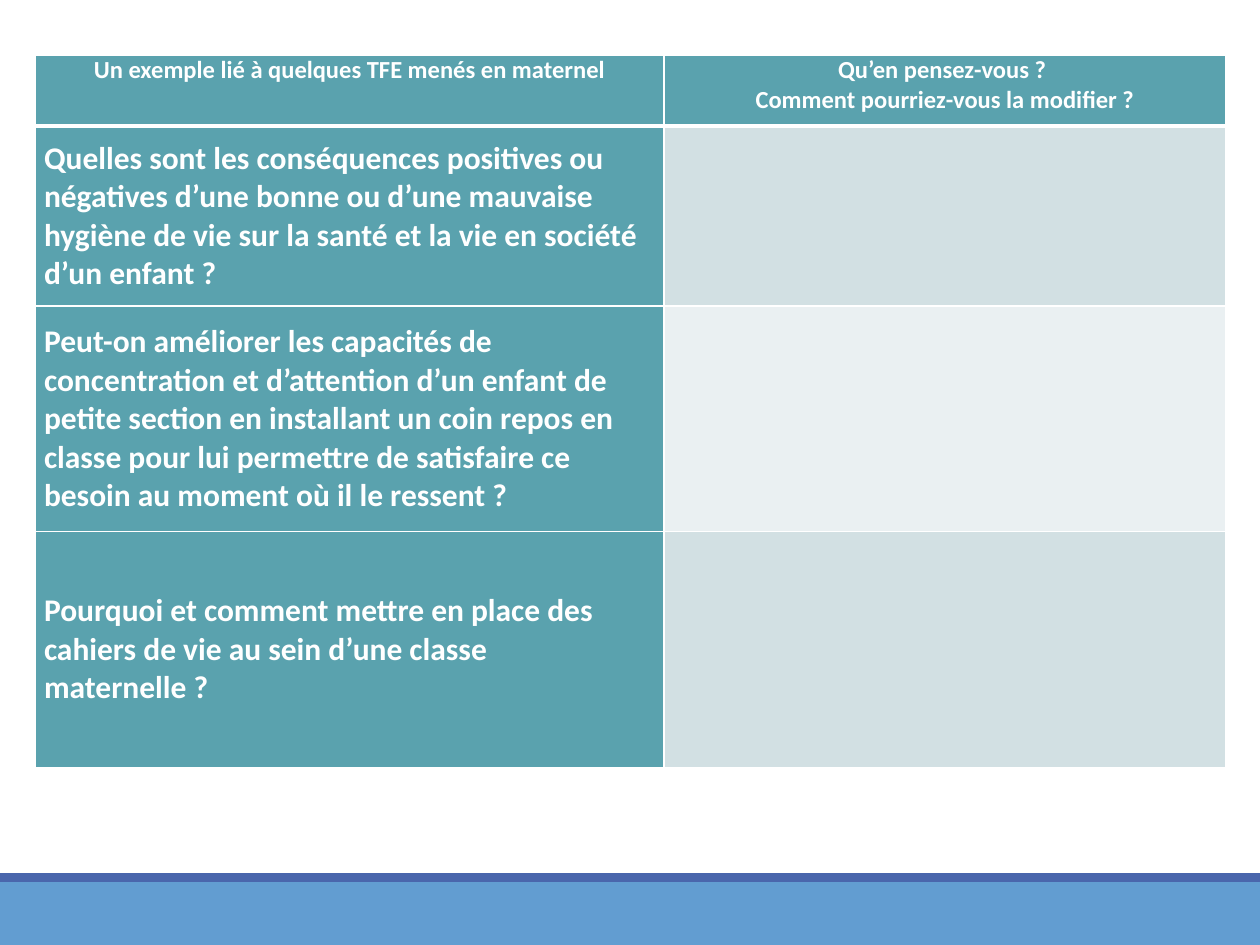
import pptx
import pptx.dml.color
import pptx.enum.shapes
import pptx.enum.text
import pptx.oxml
import pptx.oxml.ns
import pptx.util

Inches = pptx.util.Inches
Pt = pptx.util.Pt
RGBColor = pptx.dml.color.RGBColor
Align = pptx.enum.text.PP_ALIGN
Anchor = pptx.enum.text.MSO_ANCHOR

WHITE = RGBColor(0xFF, 0xFF, 0xFF)
TEAL = RGBColor(0x5A, 0xA2, 0xAE)
BAND_DARK = RGBColor(0xD2, 0xE0, 0xE3)
BAND_LIGHT = RGBColor(0xEA, 0xF0, 0xF2)
FOOTER_BLUE = RGBColor(0x62, 0x9D, 0xD1)
FOOTER_EDGE = RGBColor(0x4A, 0x66, 0xAC)

FOOTER_BARS = [
    (7, 0.5, FOOTER_BLUE),
    (6.93, 0.07, FOOTER_EDGE),
]
COLUMN_WIDTHS = [4.99, 4.46]
ROW_HEIGHTS = [0.56, 1.43, 1.79, 1.87]
ROWS = [
    ("Un exemple lié à quelques TFE menés en maternel",
     "Qu’en pensez-vous ? \nComment pourriez-vous la modifier ?"),
    ("Quelles sont les conséquences positives ou négatives d’une bonne ou "
     "d’une mauvaise hygiène de vie sur la santé et la vie en société "
     "d’un enfant ? ", ""),
    ("Peut-on améliorer les capacités de concentration et d’attention d’un "
     "enfant de petite section en installant un coin repos en classe pour lui "
     "permettre de satisfaire ce besoin au moment où il le ressent ?", ""),
    ("Pourquoi et comment mettre en place des cahiers de vie au sein d’une "
     "classe maternelle ?", ""),
]


def add_bar(slide, top, height, color):
    bar = slide.shapes.add_shape(
        pptx.enum.shapes.MSO_SHAPE.RECTANGLE,
        0, Inches(top), Inches(10), Inches(height))
    bar.shadow.inherit = False
    bar.fill.solid()
    bar.fill.fore_color.rgb = color
    bar.line.fill.background()


def set_borders(cell, widths):
    properties = cell._tc.get_or_add_tcPr()
    for position, (side, width) in enumerate(widths.items()):
        border = pptx.oxml.parse_xml(
            f'<a:{side} {pptx.oxml.ns.nsdecls("a")} w="{Pt(width)}">'
            f'<a:solidFill><a:srgbClr val="{WHITE}"/></a:solidFill></a:{side}>')
        properties.insert(position, border)


def write_cell(cell, text, size, align, anchor):
    cell.margin_left = cell.margin_right = Inches(0.07)
    cell.margin_top = cell.margin_bottom = 0
    cell.vertical_anchor = anchor
    cell.text_frame.text = text
    for para in cell.text_frame.paragraphs:
        para.alignment = align
        for span in para.runs:
            span.font.name = "Calibri"
            span.font.size = Pt(size)
            span.font.bold = True
            span.font.color.rgb = WHITE


def add_question_table(slide):
    table = slide.shapes.add_table(
        len(ROWS), len(COLUMN_WIDTHS), Inches(0.28), Inches(0.44),
        Inches(sum(COLUMN_WIDTHS)), Inches(sum(ROW_HEIGHTS))).table
    for column, width in zip(table.columns, COLUMN_WIDTHS):
        column.width = Inches(width)
    for row, height in zip(table.rows, ROW_HEIGHTS):
        row.height = Inches(height)

    for r, texts in enumerate(ROWS):
        header = r == 0
        band = BAND_DARK if r % 2 else BAND_LIGHT
        for c, text in enumerate(texts):
            cell = table.cell(r, c)
            cell.fill.solid()
            cell.fill.fore_color.rgb = TEAL if header or c == 0 else band
            set_borders(cell, {"lnL": 1, "lnR": 1,
                               "lnT": 3 if r == 1 else 1,
                               "lnB": 3 if header else 1})
            if header:
                write_cell(cell, text, 14, Align.CENTER, Anchor.TOP)
            elif text:
                write_cell(cell, text, 18, Align.LEFT, Anchor.MIDDLE)


def main():
    deck = pptx.Presentation()
    deck.slide_width = Inches(10)
    deck.slide_height = Inches(7.5)
    page = deck.slides.add_slide(deck.slide_layouts[6])
    for top, height, color in FOOTER_BARS:
        add_bar(page, top, height, color)
    add_question_table(page)
    deck.save("out.pptx")


if __name__ == "__main__":
    main()
